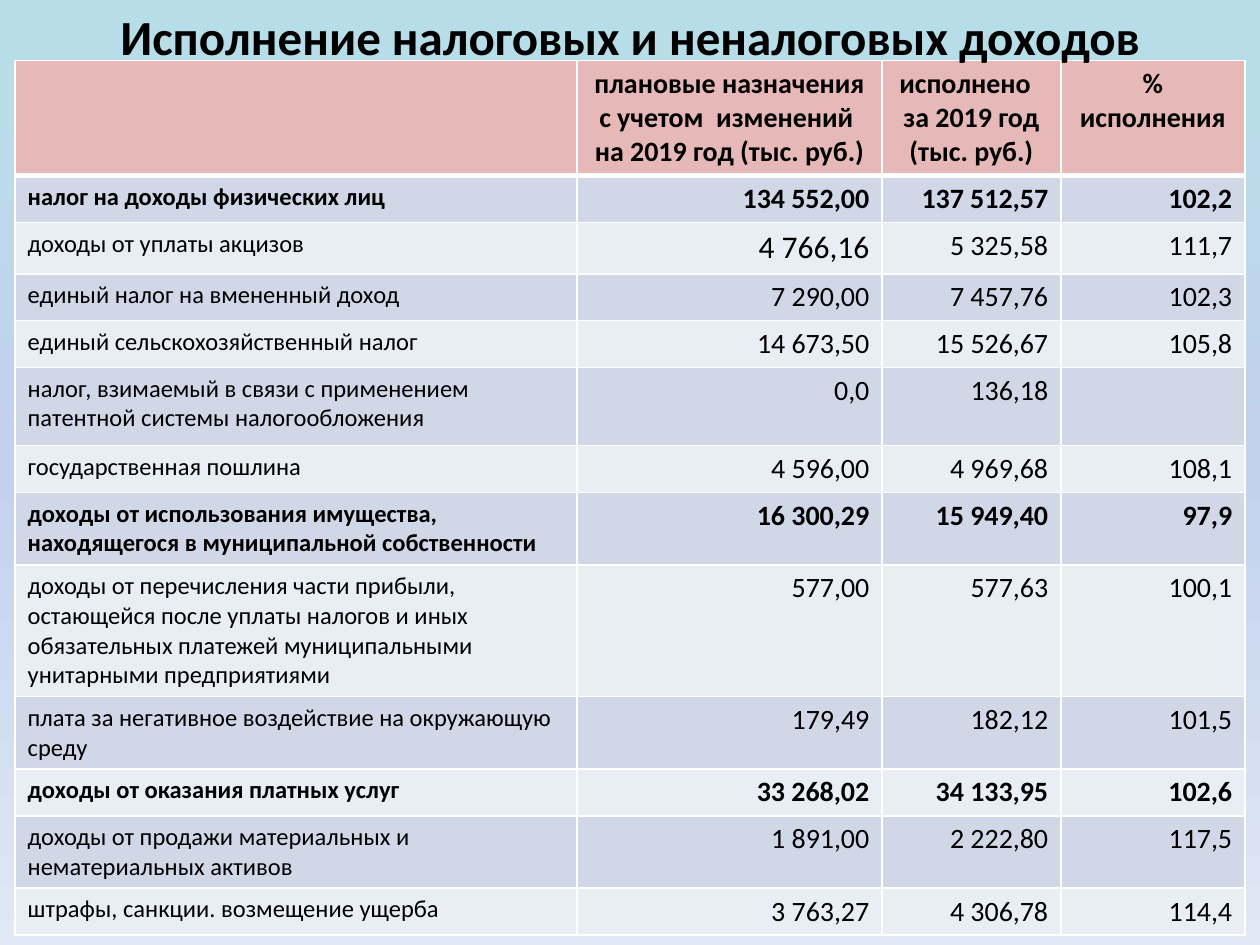
from lxml.etree import SubElement
from pptx import Presentation
from pptx.dml.color import RGBColor
from pptx.enum.text import MSO_ANCHOR, PP_ALIGN
from pptx.oxml.ns import qn
from pptx.util import Inches, Pt

FONT = "Calibri"
BLACK, WHITE = "000000", "FFFFFF"
HEADER_FILL = "E6B9B8"
BAND_FILLS = ("D0D8E8", "E9EDF4")
BACKGROUND_STOPS = ((0, "B7DEE8"), (50, "C2D1ED"), (100, "E1E8F5"))

COLUMN_WIDTHS = (4.46, 2.42, 1.42, 1.46)
ROW_HEIGHTS = (0.89, 0.36, 0.39, 0.36, 0.36, 0.62, 0.36,
               0.56, 1.02, 0.56, 0.36, 0.56, 0.35)
HEADERS = (
    "",
    "плановые назначения с учетом  изменений \nна 2019 год (тыс. руб.)",
    "исполнено  \nза 2019 год (тыс. руб.)",
    "% исполнения",
)
INCOMES = (
    ("налог на доходы физических лиц", "134 552,00", "137 512,57", "102,2"),
    ("доходы от уплаты акцизов", "4 766,16", "5 325,58", "111,7"),
    ("единый налог на вмененный доход", "7 290,00", "7 457,76", "102,3"),
    ("единый сельскохозяйственный налог", "14 673,50", "15 526,67", "105,8"),
    ("налог, взимаемый в связи с применением патентной системы налогообложения",
     "0,0", "136,18", ""),
    ("государственная пошлина", "4 596,00", "4 969,68", "108,1"),
    ("доходы от использования имущества, находящегося в муниципальной собственности",
     "16 300,29", "15 949,40", "97,9"),
    ("доходы от перечисления части прибыли, остающейся после уплаты налогов и иных "
     "обязательных платежей муниципальными унитарными предприятиями",
     "577,00", "577,63", "100,1"),
    ("плата за негативное воздействие на окружающую среду",
     "179,49", "182,12", "101,5"),
    ("доходы от оказания платных услуг", "33 268,02", "34 133,95", "102,6"),
    ("доходы от продажи материальных и нематериальных активов",
     "1 891,00", "2 222,80", "117,5"),
    ("штрафы, санкции. возмещение ущерба", "3 763,27", "4 306,78", "114,4"),
)
BOLD_ROWS = (0, 1, 7, 10)
LARGE_CELL = (2, 1)


def color(hex_string):
    return RGBColor.from_string(hex_string)


def style_text(frame, size, bold, align):
    for paragraph in frame.paragraphs:
        paragraph.alignment = align
        font = paragraph.font
        font.name, font.size, font.bold = FONT, Pt(size), bold
        font.color.rgb = color(BLACK)


def paint_background(slide):
    fill = slide.background.fill
    fill.gradient()
    gradient = slide.background._cSld.find(".//" + qn("a:gradFill"))
    stops = gradient.find(qn("a:gsLst"))
    for stop in list(stops):
        stops.remove(stop)
    for position, hex_string in BACKGROUND_STOPS:
        stop = SubElement(stops, qn("a:gs"), pos=str(position * 1000))
        SubElement(stop, qn("a:srgbClr"), val=hex_string)
    gradient.find(qn("a:lin")).set("ang", str(90 * 60000))


def set_borders(cell, top, bottom):
    properties = cell._tc.get_or_add_tcPr()
    for side, width in (("L", 1), ("R", 1), ("T", top), ("B", bottom)):
        line = SubElement(properties, qn("a:ln" + side), w=str(Pt(width)))
        solid = SubElement(line, qn("a:solidFill"))
        SubElement(solid, qn("a:srgbClr"), val=WHITE)


def add_income_table(slide, left, top):
    rows = (HEADERS, *INCOMES)
    table = slide.shapes.add_table(
        len(rows), len(COLUMN_WIDTHS), left, top,
        Inches(sum(COLUMN_WIDTHS)), Inches(sum(ROW_HEIGHTS))).table
    for column, width in zip(table.columns, COLUMN_WIDTHS):
        column.width = Inches(width)
    for row, height in zip(table.rows, ROW_HEIGHTS):
        row.height = Inches(height)

    for r, row in enumerate(rows):
        for c, text in enumerate(row):
            cell = table.cell(r, c)
            # The thick line under the header belongs to both rows
            set_borders(cell, 3 if r == 1 else 1, 3 if r == 0 else 1)
            cell.fill.solid()
            cell.fill.fore_color.rgb = color(
                BAND_FILLS[(r - 1) % 2] if r else HEADER_FILL)
            cell.text = text
            if r == 0:
                size, align = 16, PP_ALIGN.CENTER
            elif c == 0:
                size, align = 14, PP_ALIGN.LEFT
            else:
                size, align = 18 if (r, c) == LARGE_CELL else 16, PP_ALIGN.RIGHT
            style_text(cell.text_frame, size, r in BOLD_ROWS, align)


def place_title(slide, left, top, width, height):
    title = slide.shapes.title
    title.left, title.top, title.width, title.height = left, top, width, height
    frame = title.text_frame
    frame.text = "Исполнение налоговых и неналоговых доходов"
    frame.word_wrap = True
    frame.vertical_anchor = MSO_ANCHOR.TOP
    style_text(frame, 28, True, PP_ALIGN.CENTER)
    # The title lies in front of the table
    slide.shapes._spTree.append(title._element)


def main():
    presentation = Presentation()
    presentation.slide_width, presentation.slide_height = Inches(10), Inches(7.5)
    slide = presentation.slides.add_slide(presentation.slide_layouts[5])
    paint_background(slide)
    add_income_table(slide, Inches(0.12), Inches(0.48))
    place_title(slide, 0, 0, presentation.slide_width, Inches(0.57))
    presentation.save("out.pptx")


if __name__ == "__main__":
    main()
